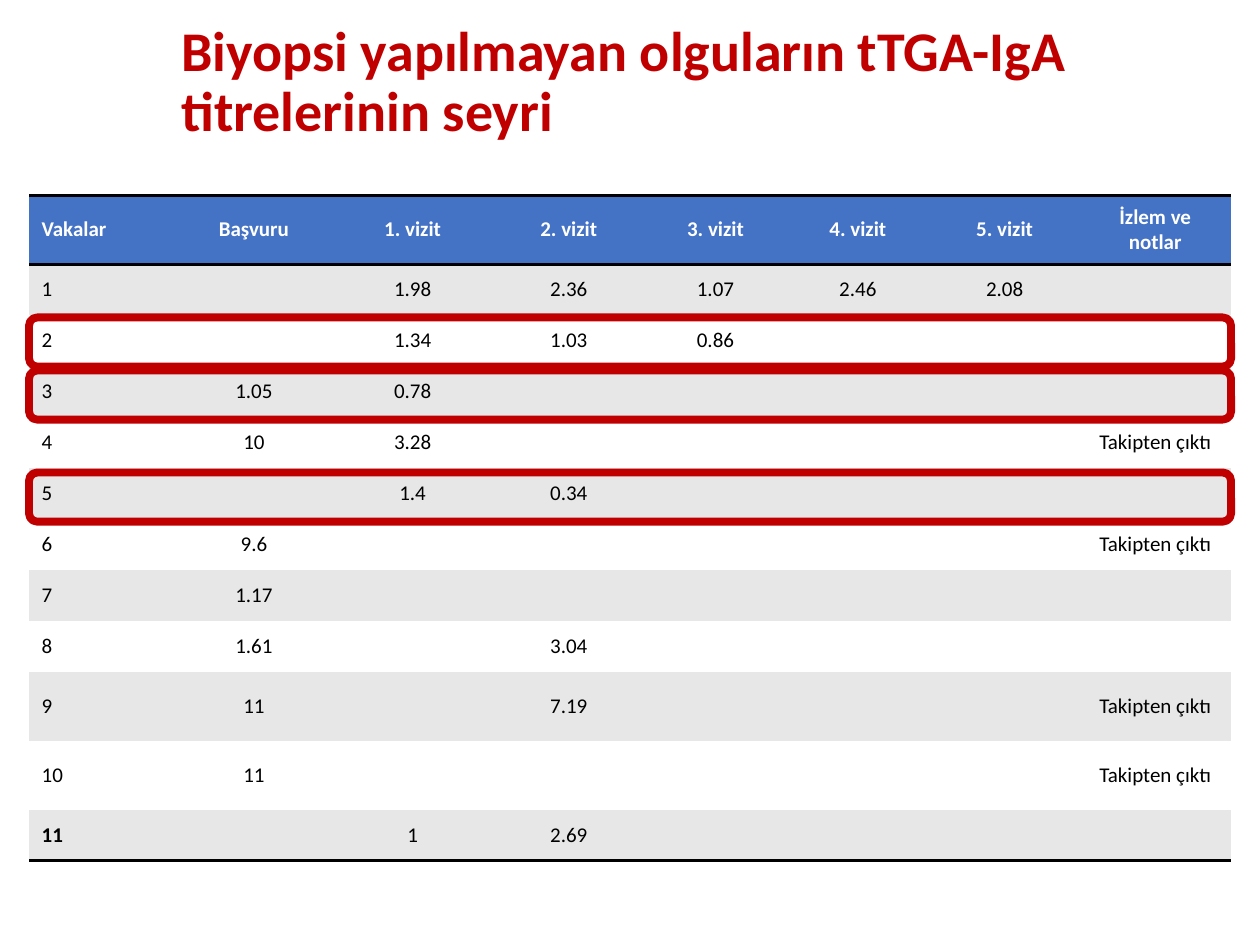
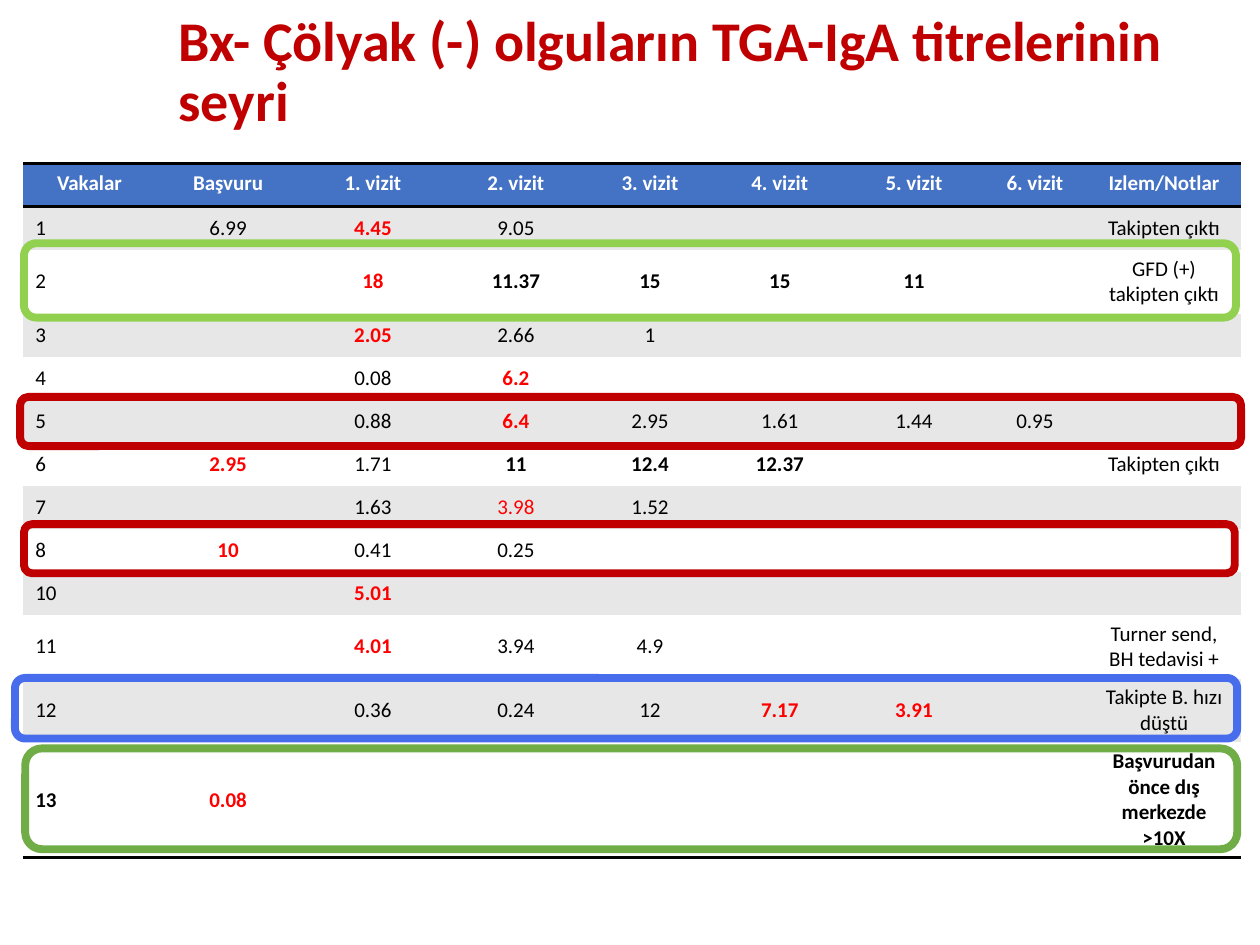
from lxml.etree import SubElement
from pptx import Presentation
from pptx.dml.color import RGBColor
from pptx.enum.shapes import MSO_SHAPE
from pptx.enum.text import MSO_ANCHOR, PP_ALIGN
from pptx.oxml.ns import qn
from pptx.util import Pt

# Shared look
FONT = "Calibri"
DARK_RED = RGBColor(0xC0, 0x00, 0x00)
RED = RGBColor(0xFF, 0x00, 0x00)
BLACK = RGBColor(0x00, 0x00, 0x00)
WHITE = RGBColor(0xFF, 0xFF, 0xFF)
HEADER_BLUE = RGBColor(0x44, 0x72, 0xC4)
BAND_GREY = RGBColor(0xE7, 0xE7, 0xE7)
LIME = RGBColor(0x92, 0xD0, 0x50)
BLUE = RGBColor(0x47, 0x6D, 0xEC)
GREEN = RGBColor(0x70, 0xAD, 0x47)
NO_GRID_STYLE = "{2D5ABB26-0587-4C30-8999-92F81FD0307C}"

# Cell marks: * bold, ! red and bold, ~ red
MARKS = {"*": (BLACK, True), "!": (RED, True), "~": (RED, False)}

# Row heights for one, two and four lines of text on the second slide
ONE, TWO, FOUR = 24.6, 36.5, 65.8

SLIDES = [
    {
        "title": "Biyopsi yapılmayan olguların tTGA-IgA titrelerinin seyri",
        "title_box": (96.5, 23, 647.3, 49),
        "table_at": (16.6, 111.6),
        "cols": [83.5, 90, 91.4, 87.1, 80.6, 82.1, 85.7, 86.4],
        "heights": [39.4] + [29.15] * 8 + [39.4] * 2 + [29.15],
        "header_anchor": MSO_ANCHOR.MIDDLE,
        "first_header_align": PP_ALIGN.LEFT,
        "rows": [
            "Vakalar|Başvuru|1. vizit|2. vizit|3. vizit|4. vizit|5. vizit|İzlem ve notlar",
            "1||1.98|2.36|1.07|2.46|2.08|",
            "2||1.34|1.03|0.86|||",
            "3|1.05|0.78|||||",
            "4|10|3.28|||||Takipten çıktı",
            "5||1.4|0.34||||",
            "6|9.6||||||Takipten çıktı",
            "7|1.17||||||",
            "8|1.61||3.04||||",
            "9|11||7.19||||Takipten çıktı",
            "10|11||||||Takipten çıktı",
            "*11||1|2.69||||",
        ],
        "frames": [(16.6, top, 686.9, 28.1, DARK_RED) for top in (181.4, 211.7, 270)],
    },
    {
        "title": "Bx- Çölyak (-) olguların TGA-IgA titrelerinin seyri",
        "title_box": (95, 17.3, 613.4, 49),
        "table_at": (13, 93.6),
        "cols": [76.3, 82.1, 83.5, 79.9, 73.4, 74.9, 78.5, 59.8, 87.8],
        "heights": [ONE] * 2 + [TWO] + [ONE] * 7 + [TWO] * 2 + [FOUR],
        "header_anchor": MSO_ANCHOR.TOP,
        "first_header_align": PP_ALIGN.CENTER,
        "rows": [
            "Vakalar|Başvuru|1. vizit|2. vizit|3. vizit|4. vizit|5. vizit|6. vizit|Izlem/Notlar",
            "1|6.99|!4.45|9.05|||||Takipten çıktı",
            "2||!18|*11.37|*15|*15|*11||GFD (+) takipten çıktı",
            "3||!2.05|2.66|1||||",
            "4||0.08|!6.2|||||",
            "5||0.88|!6.4|2.95|1.61|1.44|0.95|",
            "6|!2.95|1.71|*11|*12.4|*12.37|||Takipten çıktı",
            "7||1.63|~3.98|1.52||||",
            "8|!10|0.41|0.25|||||",
            "10||!5.01||||||",
            "11||!4.01|3.94|4.9||||Turner send, BH tedavisi +",
            "12||0.36|0.24|12|!7.17|!3.91||Takipte B. hızı düştü",
            "*13|!0.08|||||||*Başvurudan önce dış merkezde >10X",
        ],
        "frames": [
            (11.5, 226.8, 697.7, 28.1, DARK_RED),
            (13.7, 299.5, 691.9, 28.1, DARK_RED),
            (13.7, 139, 692.6, 42.5, LIME),
            (8.6, 387.4, 698.4, 34.6, BLUE),
            (14.4, 427.7, 692.6, 57.6, GREEN),
        ],
    },
]


def add_run(p, text, size, color, bold):
    r = p.add_run()
    r.text = text
    r.font.name = FONT
    r.font.size = Pt(size)
    r.font.bold = bold
    r.font.color.rgb = color


def add_rule(cell, side):
    """Draw a 2 pt black rule on one side of a cell."""
    ln = SubElement(cell._tc.get_or_add_tcPr(), qn(f"a:{side}"), w=str(Pt(2)))
    fill = SubElement(ln, qn("a:solidFill"))
    SubElement(fill, qn("a:srgbClr"), val=str(BLACK))


prs = Presentation()
prs.slide_width, prs.slide_height = Pt(720), Pt(540)

for data in SLIDES:
    s = prs.slides.add_slide(prs.slide_layouts[6])

    # Title
    tf = s.shapes.add_textbox(*map(Pt, data["title_box"])).text_frame
    tf.word_wrap = True
    tf.vertical_anchor = MSO_ANCHOR.MIDDLE
    p = tf.paragraphs[0]
    p.line_spacing = 0.9
    add_run(p, data["title"], 32, DARK_RED, True)

    # Table of titres per visit
    rows, cols, heights = data["rows"], data["cols"], data["heights"]
    left, top = data["table_at"]
    sp = s.shapes.add_table(len(rows), len(cols), Pt(left), Pt(top),
                            Pt(sum(cols)), Pt(sum(heights)))
    table = sp.table
    table._tbl.tblPr.find(qn("a:tableStyleId")).text = NO_GRID_STYLE
    for column, width in zip(table.columns, cols):
        column.width = Pt(width)
    for i, (row, height) in enumerate(zip(rows, heights)):
        table.rows[i].height = Pt(height)
        for j, text in enumerate(row.split("|")):
            cell = table.cell(i, j)
            if i == 0:
                add_rule(cell, "lnT")
            if i in (0, len(rows) - 1):
                add_rule(cell, "lnB")
            cell.fill.solid()
            cell.vertical_anchor = MSO_ANCHOR.MIDDLE
            p = cell.text_frame.paragraphs[0]
            p.alignment = PP_ALIGN.CENTER if j else PP_ALIGN.LEFT
            if i == 0:
                cell.fill.fore_color.rgb = HEADER_BLUE
                cell.vertical_anchor = data["header_anchor"]
                if j == 0:
                    p.alignment = data["first_header_align"]
                color, bold = WHITE, True
            else:
                cell.fill.fore_color.rgb = BAND_GREY if i % 2 else WHITE
                color, bold = MARKS.get(text[:1], (BLACK, False))
            if text:
                add_run(p, text.lstrip("*!~"), 12, color, bold)
            else:
                # Keep empty cells from stretching the row
                SubElement(p._p, qn("a:endParaRPr"), sz="1200")

    # Frames around the highlighted cases
    for x, y, w, h, color in data["frames"]:
        sp = s.shapes.add_shape(MSO_SHAPE.ROUNDED_RECTANGLE, Pt(x), Pt(y), Pt(w), Pt(h))
        sp.shadow.inherit = False
        sp.fill.background()
        sp.line.color.rgb = color
        sp.line.width = Pt(4.5)

prs.save("out.pptx")
